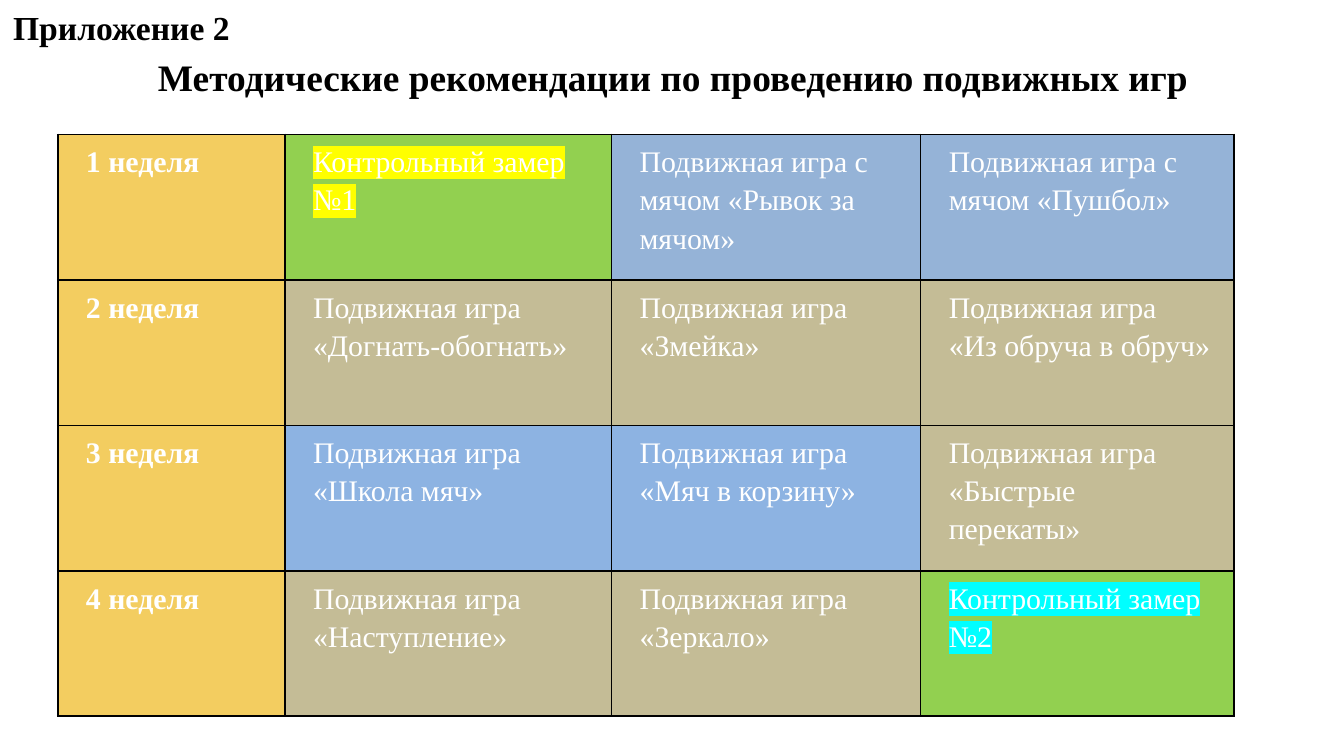
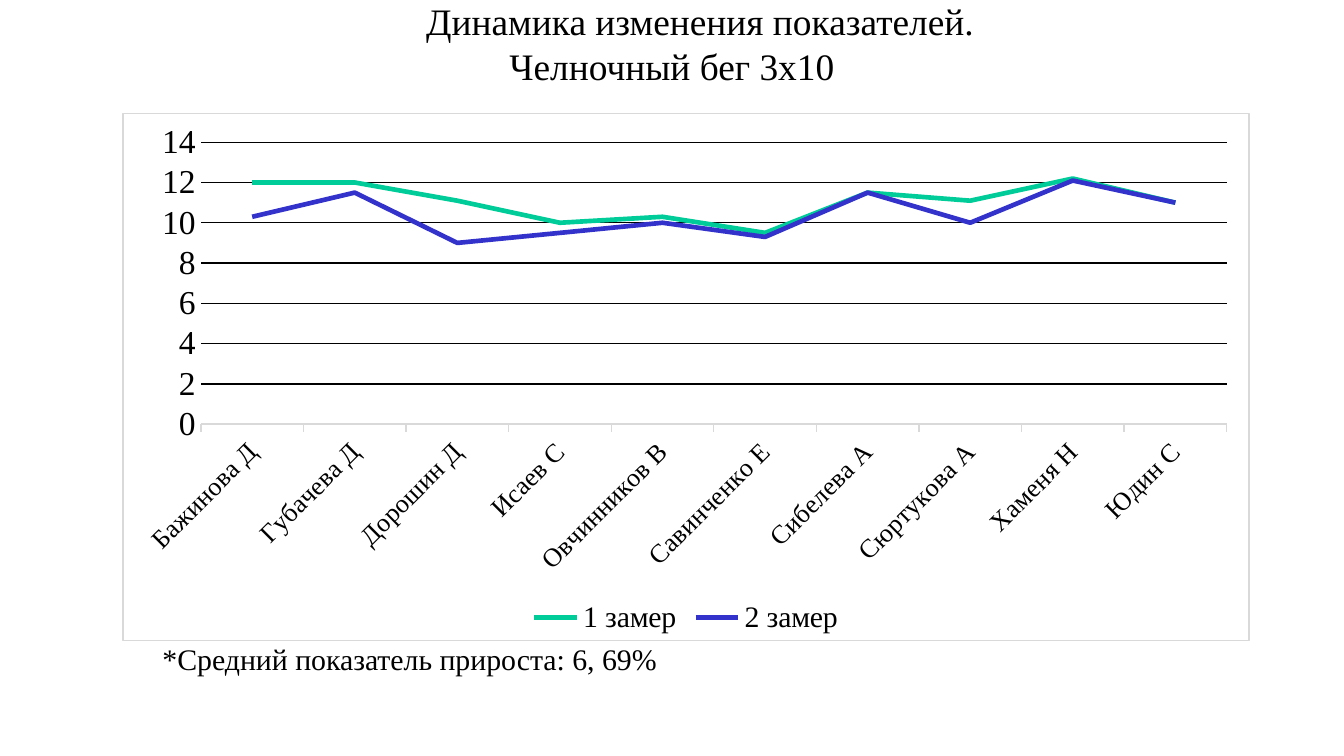
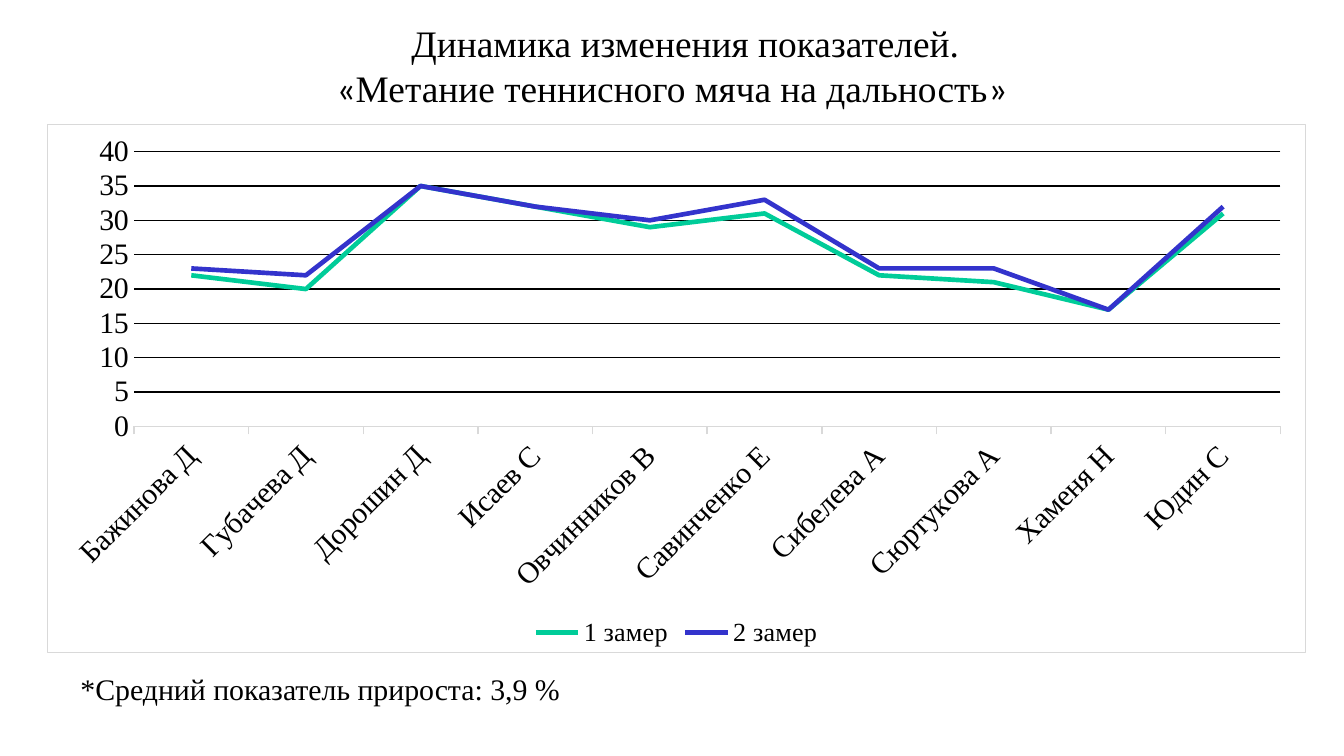
"""Build three slides on active games and the measured results."""
import lxml.etree as etree
import pptx
import pptx.chart.data
import pptx.dml.color
import pptx.enum.chart
import pptx.enum.text
import pptx.oxml.ns
import pptx.util

Inches = pptx.util.Inches
Pt = pptx.util.Pt
qn = pptx.oxml.ns.qn
SERIF = "Times New Roman"
COLORS = {
    "black": "000000", "white": "FFFFFF", "gray": "D9D9D9",
    "week": "F3CD60", "test": "92D050", "ball": "95B3D7",
    "throw": "8DB3E2", "run": "C4BC96",
    "yellow": "FFFF00", "cyan": "00FFFF",
    "first": "00CC99", "second": "3333CC",
}
NAMES = ["Бажинова Д", "Губачева Д", "Дорошин Д", "Исаев С", "Овчинников В",
         "Савинченко Е", "Сибелева А", "Сюртукова А", "Хаменя Н", "Юдин С"]
WEEKS = [
    [("1 неделя", "week"), ("Контрольный замер №1", "test", "yellow"),
     ("Подвижная игра с мячом «Рывок за мячом»", "ball"),
     ("Подвижная игра с мячом «Пушбол»", "ball")],
    [("2 неделя", "week"), ("Подвижная игра «Догнать-обогнать»", "run"),
     ("Подвижная игра «Змейка»", "run"),
     ("Подвижная игра\n«Из обруча в обруч»", "run")],
    [("3 неделя", "week"), ("Подвижная игра «Школа мяч»", "throw"),
     ("Подвижная игра «Мяч в корзину»", "throw"),
     ("Подвижная игра «Быстрые\nперекаты»", "run")],
    [("4 неделя", "week"), ("Подвижная игра «Наступление»", "run"),
     ("Подвижная игра «Зеркало»", "run"),
     ("Контрольный замер №2", "test", "cyan")],
]


def rgb(name):
    """Return the named colour."""
    return pptx.dml.color.RGBColor.from_string(COLORS[name])


def style(font, size, color="black", bold=False):
    """Set the shared face with a size and colour."""
    font.name, font.size, font.bold = SERIF, Pt(size), bold
    font.color.rgb = rgb(color)


def paint(parent, tag, color):
    """Append an element that holds a colour."""
    node = etree.SubElement(parent, qn(tag))
    etree.SubElement(node, qn("a:srgbClr"), val=COLORS[color])


def write(para, text, mark=None):
    """Add text to a paragraph, with line breaks and a highlight."""
    for index, line in enumerate(text.split("\n")):
        if index:
            para.add_line_break()
        if line:
            run = para.add_run()
            run.text = line
            if mark:
                paint(run._r.get_or_add_rPr(), "a:highlight", mark)


def indent(para, left=0, first=0):
    """Set the left margin and first line indent in inches."""
    props = para._p.get_or_add_pPr()
    props.set("marL", str(Inches(left)))
    props.set("indent", str(Inches(first)))


def label(slide, text, box, size, bold=False, left=0, first=0):
    """Add a text box and return its paragraph."""
    frame = slide.shapes.add_textbox(*map(Inches, box)).text_frame
    frame.word_wrap = True
    para = frame.paragraphs[0]
    indent(para, left, first)
    style(para.font, size, bold=bold)
    write(para, text)
    return para


def title(slide, text, top, high, left=0.5, first=0, bold=False):
    """Add a centred title."""
    para = label(slide, text, (left, top, 9, high), 20, bold, first=first)
    para.alignment = pptx.enum.text.PP_ALIGN.CENTER
    slide.shapes[-1].text_frame.vertical_anchor = pptx.enum.text.MSO_ANCHOR.MIDDLE
    return para


def border(cell):
    """Draw thin black lines around a cell."""
    props = cell._tc.get_or_add_tcPr()
    for index, side in enumerate("LRTB"):
        line = etree.Element(qn("a:ln" + side), w=str(Pt(1)))
        paint(line, "a:solidFill", "black")
        props.insert(index, line)


def fill(cell, text, back, mark=None):
    """Fill and write one table cell."""
    cell.fill.solid()
    cell.fill.fore_color.rgb = rgb(back)
    cell.margin_left = cell.margin_right = Inches(0.09)
    cell.margin_top = cell.margin_bottom = Inches(0.05)
    border(cell)
    para = cell.text_frame.paragraphs[0]
    indent(para, 0.12)
    para.line_spacing = 1.15
    style(para.font, 16, "white", back == "week")
    write(para, text, mark)


def plan(slide):
    """Add the table of games by week."""
    wide = [1.69, 2.43, 2.3, 2.33]
    table = slide.shapes.add_table(len(WEEKS), len(wide), Inches(0.43), Inches(1),
                                   Inches(sum(wide)), Inches(4.33)).table
    table.first_row = table.horz_banding = False
    for col, width in zip(table.columns, wide):
        col.width = Inches(width)
    for row, week in zip(table.rows, WEEKS):
        for cell, entry in zip(row.cells, week):
            fill(cell, *entry)


def edge(chart):
    """Draw a thin gray line around a chart."""
    props = etree.Element(qn("c:spPr"))
    etree.SubElement(props, qn("a:noFill"))
    line = etree.SubElement(props, qn("a:ln"), w=str(Pt(0.75)))
    paint(line, "a:solidFill", "gray")
    chart.element.find(qn("c:chart")).addnext(props)


def stroke(line, color, width=0.75):
    """Set the colour and width of a line."""
    line.color.rgb = rgb(color)
    line.width = Pt(width)


def graph(slide, box, rows, top, step, sizes):
    """Add a line chart; sizes are for names, values and legend."""
    data = pptx.chart.data.CategoryChartData()
    data.categories = NAMES
    for index, row in enumerate(rows, 1):
        data.add_series(f"{index} замер", row)
    kinds = pptx.enum.chart
    chart = slide.shapes.add_chart(kinds.XL_CHART_TYPE.LINE,
                                   *map(Inches, box), data).chart
    chart.has_title = False
    chart.font.name, chart.font.size = "Calibri", Pt(10)
    chart.font.color.rgb = rgb("black")
    edge(chart)

    names, scale = chart.category_axis, chart.value_axis
    names.major_tick_mark = kinds.XL_TICK_MARK.OUTSIDE
    stroke(names.format.line, "gray")
    style(names.tick_labels.font, sizes[0])
    names._element.find(qn("c:txPr")).find(qn("a:bodyPr")).set("rot", "-2700000")
    scale.minimum_scale, scale.maximum_scale, scale.major_unit = 0, top, step
    scale.major_tick_mark = kinds.XL_TICK_MARK.NONE
    scale.format.line.fill.background()
    stroke(scale.major_gridlines.format.line, "black")
    style(scale.tick_labels.font, sizes[1])

    chart.has_legend = True
    chart.legend.position = kinds.XL_LEGEND_POSITION.BOTTOM
    chart.legend.include_in_layout = False
    style(chart.legend.font, sizes[2])
    chart.plots[0].vary_by_categories = False
    for series, color in zip(chart.series, ("first", "second")):
        series.smooth = False
        stroke(series.format.line, color, 2.5)


def games(slide):
    """Fill the slide of weekly games."""
    title(slide, "Методические рекомендации по проведению подвижных игр",
          0.37, 0.4, left=0.51, bold=True)
    label(slide, "Приложение 2", (0, 0, 10, 0.4), 18, bold=True)
    plan(slide)


def sprint(slide):
    """Fill the slide of running results."""
    title(slide, "Динамика изменения показателей. \nЧелночный бег 3х10",
          -0.04, 0.72, first=0.49)
    graph(slide, (0.91, 0.84, 8.39, 3.93),
          [(12, 12, 11.1, 10, 10.3, 9.5, 11.5, 11.1, 12.2, 11),
           (10.3, 11.5, 9, 9.5, 10, 9.3, 11.5, 10, 12.1, 11)],
          14, 2, (14, 18, 16))
    note = label(slide, "*Средний показатель прироста: 6, 69%",
                 (0.5, 4.7, 4.89, 0.79), 16, left=0.12, first=0.49)
    note.line_spacing = 1.07


def throw(slide):
    """Fill the slide of throwing results."""
    para = title(slide, "Динамика изменения показателей.\n", 0.05, 0.87, first=0.2)
    for text in ("«", "Метание теннисного мяча на дальность", "»"):
        write(para, text)
    for run in para.runs:
        if run.text in "«»":
            run.font.name = "Calibri"
    label(slide, "*Средний показатель прироста: 3,9 %",
          (0.5, 4.94, 9.15, 0.47), 16, left=0.38, first=-0.38)
    graph(slide, (0.35, 0.92, 9.37, 3.94),
          [(22, 20, 35, 32, 29, 31, 22, 21, 17, 31),
           (23, 22, 35, 32, 30, 33, 23, 23, 17, 32)],
          40, 5, (16, 16, 14))


def main():
    """Build and save the slides."""
    deck = pptx.Presentation()
    deck.slide_width = Inches(10)
    deck.slide_height = deck.slide_width * 9 // 16
    for build in (games, sprint, throw):
        build(deck.slides.add_slide(deck.slide_layouts[6]))
    deck.save("out.pptx")


if __name__ == "__main__":
    main()
